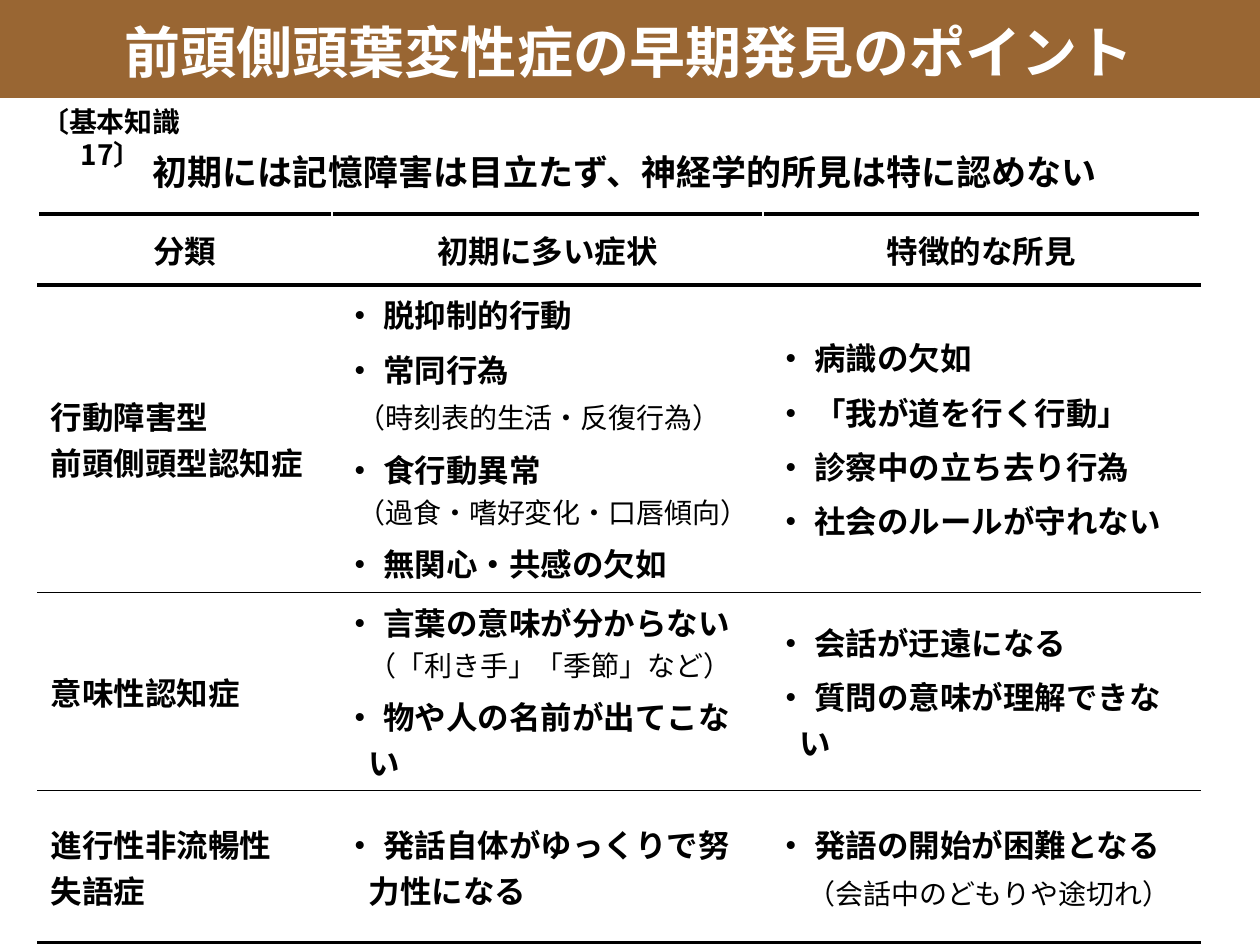
from dataclasses import dataclass

from lxml import etree
from pptx import Presentation
from pptx.dml.color import RGBColor
from pptx.enum.shapes import MSO_SHAPE
from pptx.enum.text import MSO_ANCHOR, PP_ALIGN
from pptx.oxml.ns import qn
from pptx.util import Emu, Pt

RECT = MSO_SHAPE.RECTANGLE
MIDDLE, TOP = MSO_ANCHOR.MIDDLE, MSO_ANCHOR.TOP
LEFT, CENTER = PP_ALIGN.LEFT, PP_ALIGN.CENTER

BLACK = RGBColor(0x00, 0x00, 0x00)
WHITE = RGBColor(0xFF, 0xFF, 0xFF)
BROWN = RGBColor(0x99, 0x66, 0x33)
FONT = "Noto Sans CJK JP"
EMU_PER_PX = 914400 / 126
HANG = 24
THICK, THIN = 2.25, 0.75


def px(n: int) -> Emu:
    return Emu(round(n * EMU_PER_PX))


@dataclass(frozen=True)
class Para:
    text: str = ""       # bold part
    note: str = ""       # smaller regular part
    align: PP_ALIGN = LEFT
    before: int = 0      # points
    left: int = 0        # px
    hang: int = 0        # px


def bullet(text: str, note: str = "", hang: int = HANG) -> Para:
    return Para("・ " + text, note, before=5, left=hang, hang=hang)


def remark(note: str, left: int = 13, before: int = 0) -> Para:
    return Para(note=note, left=left, before=before)


def header(text: str) -> Para:
    return Para(text, align=CENTER)


COLUMNS = (294, 431, 437)
ROW_HEIGHTS = (71, 295, 170, 152)
RULES = (THICK, THICK, THIN, THIN, THICK)  # above, between and below rows
ROWS = (
    ([header("分類")], [header("初期に多い症状")], [header("特徴的な所見")]),
    (
        [Para("行動障害型"), Para("前頭側頭型認知症")],
        [
            bullet("脱抑制的行動"),
            bullet("常同行為"),
            remark("（時刻表的生活・反復行為）", before=3),
            bullet("食行動異常"),
            remark("（過食・嗜好変化・口唇傾向）"),
            bullet("無関心・共感の欠如"),
        ],
        [
            bullet("病識の欠如", hang=0),
            bullet("「我が道を行く行動」", hang=0),
            bullet("診察中の立ち去り行為", hang=0),
            bullet("社会のルールが守れない", hang=0),
        ],
    ),
    (
        [Para("意味性認知症")],
        [
            bullet("言葉の意味が分からない", "（「利き手」「季節」など）"),
            bullet("物や人の名前が出てこない"),
        ],
        [bullet("会話が迂遠になる"), bullet("質問の意味が理解できない")],
    ),
    (
        [Para("進行性非流暢性"), Para("失語症")],
        [bullet("発話自体がゆっくりで努力性になる")],
        [
            bullet("発語の開始が困難となる", hang=0),
            remark("（会話中のどもりや途切れ）", left=32, before=3),
        ],
    ),
)


def add_run(p, text: str, *, size: int = 18, bold: bool = True,
            color: RGBColor = BLACK) -> None:
    r = p.add_run()
    r.text = text
    r.font.size, r.font.bold = Pt(size), bold
    r.font.color.rgb = color
    r.font.name = FONT
    ea = etree.SubElement(r.font._element, qn("a:ea"))
    ea.set("typeface", FONT)


def write_line(sp, text: str, box: tuple[int, int, int, int], *, size: int,
               color: RGBColor = BLACK, anchor: MSO_ANCHOR = TOP,
               spacing: int = 0) -> None:
    """Place a shape and fill it with one centred bold line."""
    sp.left, sp.top, sp.width, sp.height = map(px, box)
    tf = sp.text_frame
    tf.word_wrap, tf.vertical_anchor = True, anchor
    p = tf.paragraphs[0]
    p.alignment = CENTER
    if spacing:
        p.line_spacing = Pt(spacing)
    add_run(p, text, size=size, color=color)


def write_cell(cell, paras: list[Para]) -> None:
    cell.vertical_anchor = MIDDLE
    cell.fill.background()
    tf = cell.text_frame
    for i, para in enumerate(paras):
        p = tf.add_paragraph() if i else tf.paragraphs[0]
        p.alignment, p.space_before = para.align, Pt(para.before)
        pPr = p._p.get_or_add_pPr()
        pPr.set("marL", str(px(para.left)))
        pPr.set("indent", str(px(-para.hang)))
        if para.text:
            add_run(p, para.text)
        if para.note:
            add_run(p, para.note, size=16, bold=False)


def set_borders(cell, top: float, bottom: float) -> None:
    sides = (("lnL", WHITE, 1), ("lnR", WHITE, 1),
             ("lnT", BLACK, top), ("lnB", BLACK, bottom))
    tcPr = cell._tc.get_or_add_tcPr()
    for i, (tag, color, width) in enumerate(sides):
        ln = etree.Element(qn(f"a:{tag}"), w=str(Pt(width)))
        fill = etree.SubElement(ln, qn("a:solidFill"))
        etree.SubElement(fill, qn("a:srgbClr"), val=str(color))
        tcPr.insert(i, ln)


def add_findings_table(s) -> None:
    frame = s.shapes.add_table(len(ROWS), len(COLUMNS), px(38), px(214),
                               px(sum(COLUMNS)), px(sum(ROW_HEIGHTS)))
    table = frame.table
    table.first_row = table.horz_banding = False
    for column, width in zip(table.columns, COLUMNS):
        column.width = px(width)
    for i, (height, row) in enumerate(zip(ROW_HEIGHTS, ROWS)):
        table.rows[i].height = px(height)
        for j, paras in enumerate(row):
            cell = table.cell(i, j)
            write_cell(cell, paras)
            set_borders(cell, RULES[i], RULES[i + 1])


def main() -> None:
    prs = Presentation()
    prs.slide_width, prs.slide_height = px(1260), px(945)
    s = prs.slides.add_slide(prs.slide_layouts[5])

    # Title on its brown band
    title = s.shapes.title
    band = s.shapes.add_shape(RECT, 0, 0, px(1260), px(98))
    band.shadow.inherit = False
    band.fill.solid()
    band.fill.fore_color.rgb = BROWN
    band.line.fill.background()
    title._element.addprevious(band._element)
    write_line(title, "前頭側頭葉変性症の早期発見のポイント", (21, 4, 1217, 92),
               size=32, color=WHITE, anchor=MIDDLE, spacing=40)

    # Classification table
    add_findings_table(s)

    # Key message and section tag
    for text, box, size in (
        ("初期には記憶障害は目立たず、神経学的所見は特に認めない", (60, 144, 1130, 55), 20),
        ("〔基本知識17〕", (0, 98, 222, 47), 16),
    ):
        write_line(s.shapes.add_textbox(0, 0, 0, 0), text, box, size=size)

    prs.save("out.pptx")


if __name__ == "__main__":
    main()
